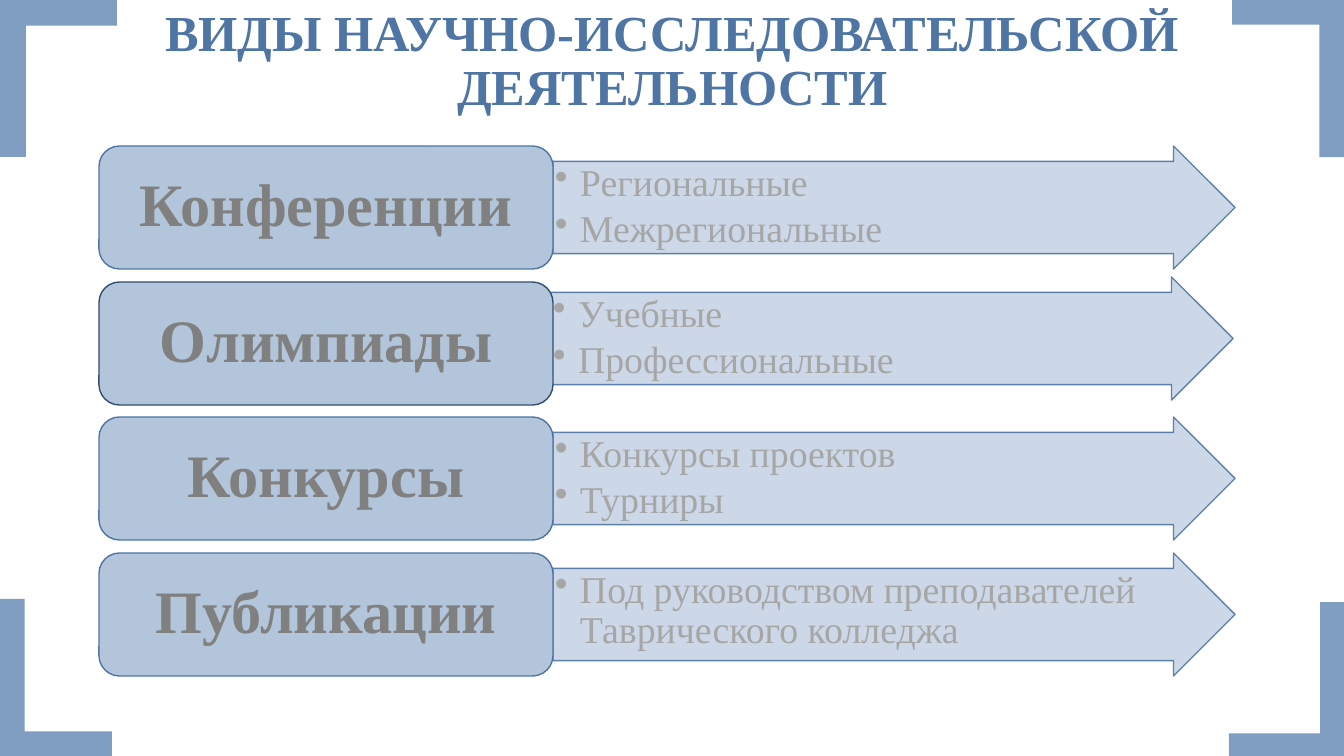
from lxml.etree import SubElement
from pptx import Presentation
from pptx.dml.color import RGBColor
from pptx.enum.shapes import MSO_SHAPE as Shape
from pptx.enum.text import MSO_ANCHOR as Anchor, PP_ALIGN as Align
from pptx.oxml.ns import qn
from pptx.util import Pt

PX = 914400 * 10 // 1008
COLORS = {
    "corner": "809EC2",
    "accent": "4E75A3",
    "dark": "344E6D",
    "arrow": "CCD8E7",
    "label": "B3C5DA",
    "label_text": "808080",
    "item_text": "A6A6A6",
}
KINDS = [
    ("Конференции", ["Региональные", "Межрегиональные"], (0, 0), "accent"),
    ("Олимпиады", ["Учебные", "Профессиональные"], (-2, -5), "dark"),
    ("Конкурсы", ["Конкурсы проектов", "Турниры"], (0, 0), "accent"),
    ("Публикации", ["Под руководством преподавателей Таврического колледжа"],
     (0, 0), "accent"),
]


def px(*lengths):
    return [length * PX for length in lengths]


def color(name):
    return RGBColor.from_string(COLORS[name])


def write(box, paragraphs, size, ink, bold=False, align=Align.CENTER,
          anchor=Anchor.MIDDLE, insets=(0, 0, 0, 0), after=0, bullet_indent=0):
    frame = box.text_frame
    frame.word_wrap = True
    frame.vertical_anchor = anchor
    (frame.margin_left, frame.margin_top,
     frame.margin_right, frame.margin_bottom) = px(*insets)
    for index, text in enumerate(paragraphs):
        para = frame.add_paragraph() if index else frame.paragraphs[0]
        para.alignment = align
        para.line_spacing = 0.9
        para.space_after = Pt(after)
        if bullet_indent:
            properties = para._p.get_or_add_pPr()
            properties.set("marL", str(bullet_indent * PX))
            properties.set("indent", str(-bullet_indent * PX))
            SubElement(properties, qn("a:buChar"), char="•")
        span = para.add_run()
        span.text = text
        span.font.name = "Times New Roman"
        span.font.size = Pt(size)
        span.font.bold = bold
        span.font.color.rgb = color(ink)


def add_block(page, kind, box, fill, line=None):
    block = page.shapes.add_shape(kind, *px(*box))
    block.shadow.inherit = False
    block.fill.solid()
    block.fill.fore_color.rgb = color(fill)
    if line:
        block.line.color.rgb = color(line)
        block.line.width = Pt(1)
    else:
        block.line.fill.background()
    return block


def add_corners(page, width, height):
    long, short = 157, 112
    shift = (long - short) // 2
    places = [
        ((0, height - long, short, long), 0),
        ((width - short, 0, short, long), 180),
        ((width - long + shift, height - short - shift, long, short + 5), 270),
        ((-shift + 2, shift - 2, long, short + 5), 90),
    ]
    for box, angle in places:
        corner = add_block(page, Shape.CORNER, box, "corner")
        corner.adjustments[0] = 0.22
        corner.adjustments[1] = 0.22
        corner.rotation = angle


def add_title(page, box):
    title = page.shapes.add_textbox(*px(*box))
    write(title, ["ВИДЫ НАУЧНО-ИССЛЕДОВАТЕЛЬСКОЙ ДЕЯТЕЛЬНОСТИ"],
          size=36, ink="accent", bold=True, insets=(10, 5, 10, 5))


def add_kind(page, box, name, items, shift, outline):
    left, top, width, height = box
    label_width = width * 2 // 5
    arrow_box = (left + label_width + shift[0], top + shift[1],
                 width - label_width, height)
    arrow = add_block(page, Shape.RIGHT_ARROW, arrow_box, "arrow", "accent")
    arrow.adjustments[0] = 0.75
    arrow.adjustments[1] = 0.5
    line_color = arrow.line._ln.find(qn("a:solidFill"))[0]
    SubElement(line_color, qn("a:alpha"), val="90000")
    write(arrow, items, size=27, ink="item_text", align=Align.LEFT,
          anchor=Anchor.TOP, insets=(2, 2, 30, 2), after=4, bullet_indent=25)

    label = add_block(page, Shape.ROUNDED_RECTANGLE,
                      (left, top, label_width, height), "label", outline)
    write(label, [name], size=43, ink="label_text", bold=True,
          insets=(18, 9, 18, 9))


def add_kinds(page, box):
    left, top, width, height = box
    row_height = 123
    pitch = (height - row_height) / (len(KINDS) - 1)
    for index, kind in enumerate(KINDS):
        row_top = top + round(index * pitch)
        add_kind(page, (left, row_top, width, row_height), *kind)


def main():
    width, height = 1344, 756
    deck = Presentation()
    deck.slide_width, deck.slide_height = px(width, height)
    page = deck.slides.add_slide(deck.slide_layouts[6])
    add_corners(page, width, height)
    add_title(page, (93, 8, 1159, 108))
    add_kinds(page, (99, 146, 1136, 530))
    deck.save("out.pptx")


if __name__ == "__main__":
    main()
